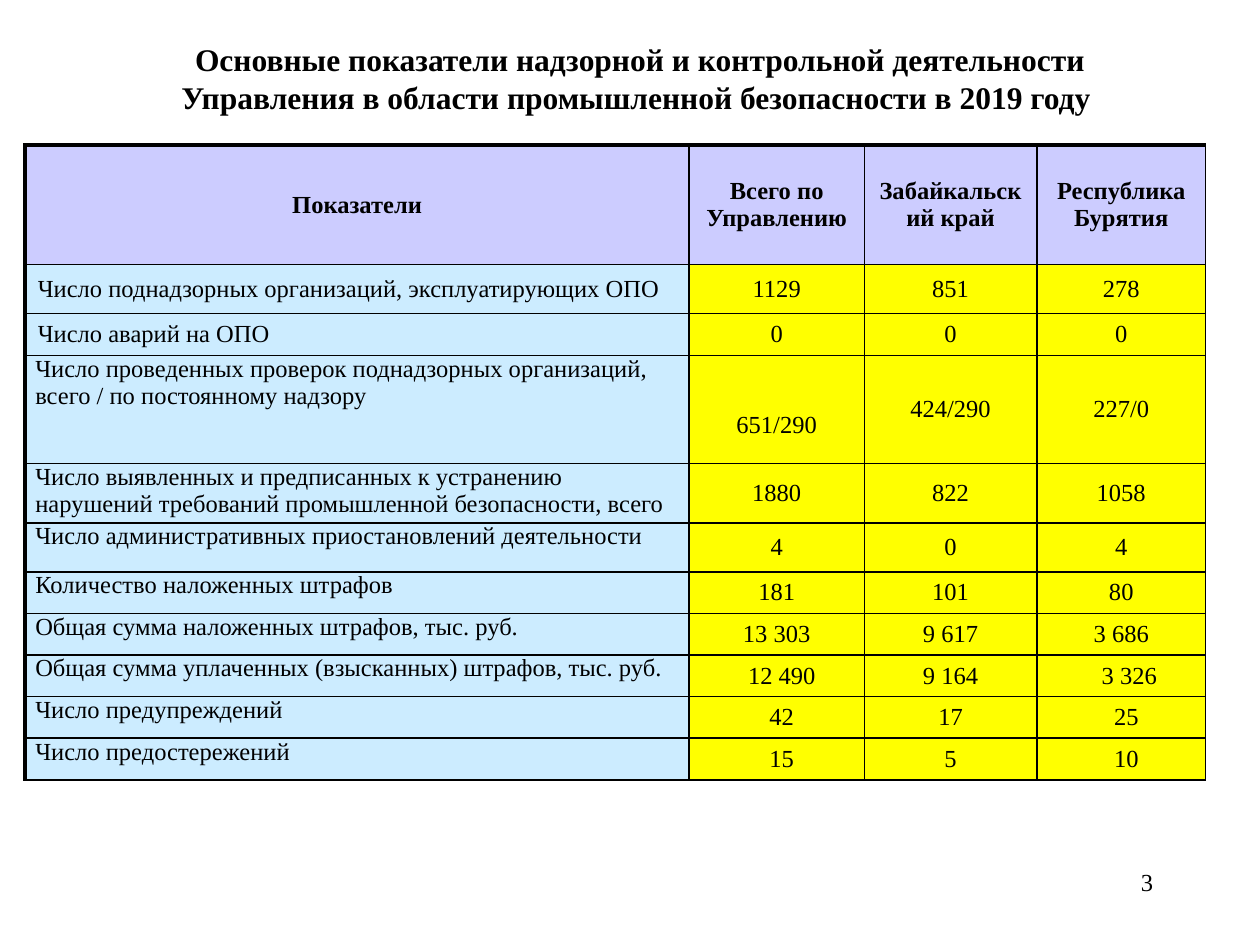
"""Build a slide with a table of industrial safety supervision results for 2019."""
from lxml.etree import SubElement
from pptx import Presentation
from pptx.dml.color import RGBColor
from pptx.enum.text import MSO_ANCHOR as ANCHOR, PP_ALIGN as ALIGN
from pptx.oxml.ns import qn
from pptx.util import Inches, Pt

TITLE = ("Основные показатели надзорной и контрольной деятельности "
         "Управления в области промышленной безопасности в 2019 году ")
PAGE = "3"
FONT, BLACK = "Times New Roman", "000000"
HEAD_FILL, LABEL_FILL, VALUE_FILL = "CCCCFF", "CCECFF", "FFFF00"
COL_WIDTHS = [5.27, 1.39, 1.37, 1.34]
ROWS = [
    (0.95, "Показатели", "Всего по Управлению", "Забайкальский край", "Республика Бурятия"),
    (0.39, "Число поднадзорных организаций, эксплуатирующих ОПО", "1129", "851", "278"),
    (0.33, "Число аварий на ОПО", "0", "0", "0"),
    (0.86, "Число проведенных проверок поднадзорных организаций, всего / по постоянному надзору",
     "651/290", "424/290", "227/0"),
    (0.47, "Число выявленных и предписанных к устранению нарушений требований "
     "промышленной безопасности, всего", "1880", "822", "1058"),
    (0.39, "Число административных приостановлений деятельности", "4", "0", "4"),
    (0.33, "Количество наложенных штрафов", "181", "101", "80"),
    (0.33, "Общая сумма наложенных штрафов, тыс. руб.", "13 303", "9 617", "3 686"),
    (0.33, "Общая сумма уплаченных (взысканных) штрафов, тыс. руб.", "12 490", "9 164", " 3 326"),
    (0.33, "Число предупреждений", "42", "17", "25"),
    (0.33, "Число предостережений", "15", "5", "10"),
]
FIRST_TOP_LABEL, FIRST_INDENTED = 3, 8
NORMAL, TIGHT, INDENTED = (0.1, 0.05, 0.1, 0.05), (0.08, 0, 0.08, 0), (0.16, 0, 0.08, 0)
LOWERED = (0.1, 0.3, 0.1, 0.05)
MARGINS = {(3, 1): LOWERED}


def color(hex_text):
    return RGBColor.from_string(hex_text)


def write(tf, text, size=14, bold=False, align=ALIGN.CENTER):
    tf.word_wrap = True
    p = tf.paragraphs[0]
    p.alignment = align
    r = p.add_run()
    r.text = text
    r.font.name, r.font.size, r.font.bold = FONT, Pt(size), bold
    r.font.color.rgb = color(BLACK)


def add_border(cell, side, width):
    line = SubElement(cell._tc.get_or_add_tcPr(), qn(f"a:ln{side}"), w=str(Pt(width)))
    fill = SubElement(line, qn("a:solidFill"))
    SubElement(fill, qn("a:srgbClr"), val=BLACK)


def margins_for(row, col):
    if col == 0:
        return TIGHT if row >= FIRST_TOP_LABEL else NORMAL
    if row >= FIRST_INDENTED and col != 2:
        return INDENTED
    return MARGINS.get((row, col), NORMAL)


def format_cell(cell, text, row, col):
    head, label = row == 0, col == 0
    for side in "LRTB":
        thick = (side == "L" and label) or (side == "T" and head)
        add_border(cell, side, 2.25 if thick else 1)
    cell.fill.solid()
    cell.fill.fore_color.rgb = color(HEAD_FILL if head else LABEL_FILL if label else VALUE_FILL)
    left, top, right, bottom = map(Inches, margins_for(row, col))
    cell.margin_left, cell.margin_top = left, top
    cell.margin_right, cell.margin_bottom = right, bottom
    at_top = label and row >= FIRST_TOP_LABEL
    cell.vertical_anchor = ANCHOR.TOP if at_top else ANCHOR.MIDDLE
    write(cell.text_frame, text, bold=head,
          align=ALIGN.LEFT if label and not head else ALIGN.CENTER)


def add_indicator_table(s):
    heights = [row[0] for row in ROWS]
    table = s.shapes.add_table(len(ROWS), len(COL_WIDTHS), Inches(0.2), Inches(1.15),
                               Inches(sum(COL_WIDTHS)), Inches(sum(heights))).table
    table.first_row = table.horz_banding = False
    for column, width in zip(table.columns, COL_WIDTHS):
        column.width = Inches(width)
    for i, (height, *texts) in enumerate(ROWS):
        table.rows[i].height = Inches(height)
        for j, text in enumerate(texts):
            format_cell(table.cell(i, j), text, i, j)


def main():
    prs = Presentation()
    prs.slide_width, prs.slide_height = Inches(10), Inches(7.5)
    s = prs.slides.add_slide(prs.slide_layouts[5])
    title = s.shapes.title
    title.left, title.top = Inches(0.83), Inches(0.16)
    title.width, title.height = Inches(8.5), Inches(0.92)
    title.text_frame.vertical_anchor = ANCHOR.MIDDLE
    write(title.text_frame, TITLE, size=18, bold=True)
    add_indicator_table(s)
    number = s.shapes.add_textbox(Inches(7.17), Inches(6.83), Inches(2.08), Inches(0.5))
    write(number.text_frame, PAGE, align=ALIGN.RIGHT)
    prs.save("out.pptx")


if __name__ == "__main__":
    main()
